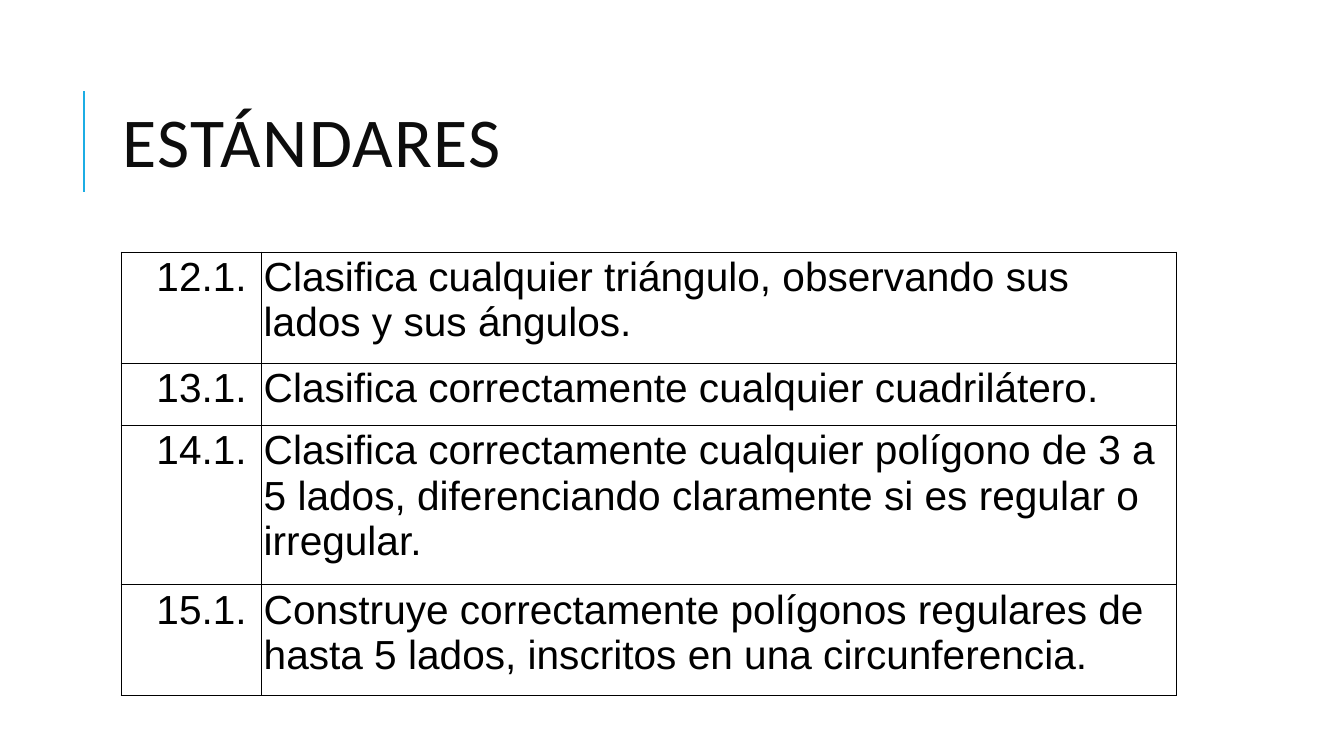
from lxml.etree import SubElement
from pptx import Presentation
from pptx.dml.color import RGBColor
from pptx.enum.shapes import MSO_CONNECTOR
from pptx.enum.text import MSO_ANCHOR, PP_ALIGN
from pptx.oxml.ns import qn
from pptx.util import Pt

ACCENT = RGBColor(0x1C, 0xAD, 0xE4)
TITLE_INK = RGBColor(0x0D, 0x0D, 0x0D)
BLACK = RGBColor(0, 0, 0)

STANDARDS = [
    ("12.1. ", "Clasifica cualquier triángulo, observando sus lados y sus ángulos."),
    ("13.1. ", "Clasifica correctamente cualquier cuadrilátero."),
    ("14.1. ", "Clasifica correctamente cualquier polígono de 3 a 5 lados, "
               "diferenciando claramente si es regular o irregular."),
    ("15.1. ", "Construye correctamente polígonos regulares de hasta 5 lados, "
               "inscritos en una circunferencia."),
]
COLUMN_WIDTHS = [100, 653.8]
ROW_HEIGHTS = [79.2, 44.6, 113.8, 79.2]


def add_span(para, text, font, size, color):
    span = para.add_run()
    span.text = text
    span.font.name = font
    span.font.size = Pt(size)
    span.font.color.rgb = color
    return span


def add_accent_line(page, x, top, bottom):
    line = page.shapes.add_connector(
        MSO_CONNECTOR.STRAIGHT, Pt(x), Pt(bottom), Pt(x), Pt(top))
    line.line.color.rgb = ACCENT
    line.line.width = Pt(1.5)
    SubElement(line._element.spPr, qn("a:effectLst"))


def add_title(page, text, left, top, width, height):
    box = page.shapes.add_textbox(Pt(left), Pt(top), Pt(width), Pt(height))
    frame = box.text_frame
    frame.word_wrap = True
    frame.vertical_anchor = MSO_ANCHOR.MIDDLE
    para = frame.paragraphs[0]
    para.line_spacing = 0.8
    span = add_span(para, text, "Calibri", 50, TITLE_INK)
    span.font._element.set("spc", "100")


def add_borders(cell):
    properties = cell._tc.get_or_add_tcPr()
    for side in ("a:lnL", "a:lnR", "a:lnT", "a:lnB"):
        border = SubElement(properties, qn(side), w=str(Pt(0.5)))
        fill = SubElement(border, qn("a:solidFill"))
        SubElement(fill, qn("a:srgbClr"), val=str(BLACK))


def fill_cell(cell, text, alignment):
    cell.margin_left = cell.margin_right = cell.margin_top = Pt(2)
    cell.margin_bottom = Pt(0)
    # Borders come before the fill in the cell properties
    add_borders(cell)
    cell.fill.background()
    para = cell.text_frame.paragraphs[0]
    para.alignment = alignment
    add_span(para, text, "Arial", 29, BLACK)


def add_standards_table(page, left, top):
    table = page.shapes.add_table(
        len(STANDARDS), len(COLUMN_WIDTHS), Pt(left), Pt(top),
        Pt(sum(COLUMN_WIDTHS)), Pt(sum(ROW_HEIGHTS))).table
    table.first_row = table.horz_banding = False
    for column, width in zip(table.columns, COLUMN_WIDTHS):
        column.width = Pt(width)
    for row, height, (number, standard) in zip(table.rows, ROW_HEIGHTS, STANDARDS):
        row.height = Pt(height)
        fill_cell(row.cells[0], number, PP_ALIGN.RIGHT)
        fill_cell(row.cells[1], standard, PP_ALIGN.LEFT)


def main():
    deck = Presentation()
    deck.slide_width, deck.slide_height = Pt(960), Pt(540)
    page = deck.slides.add_slide(deck.slide_layouts[6])

    # Heading with its accent line
    add_accent_line(page, 60, 65, 137)
    add_title(page, "ESTÁNDARES", 80.6, 46, 765.4, 118)

    # Numbered standards
    add_standards_table(page, 86.4, 180)

    deck.save("out.pptx")


if __name__ == "__main__":
    main()
